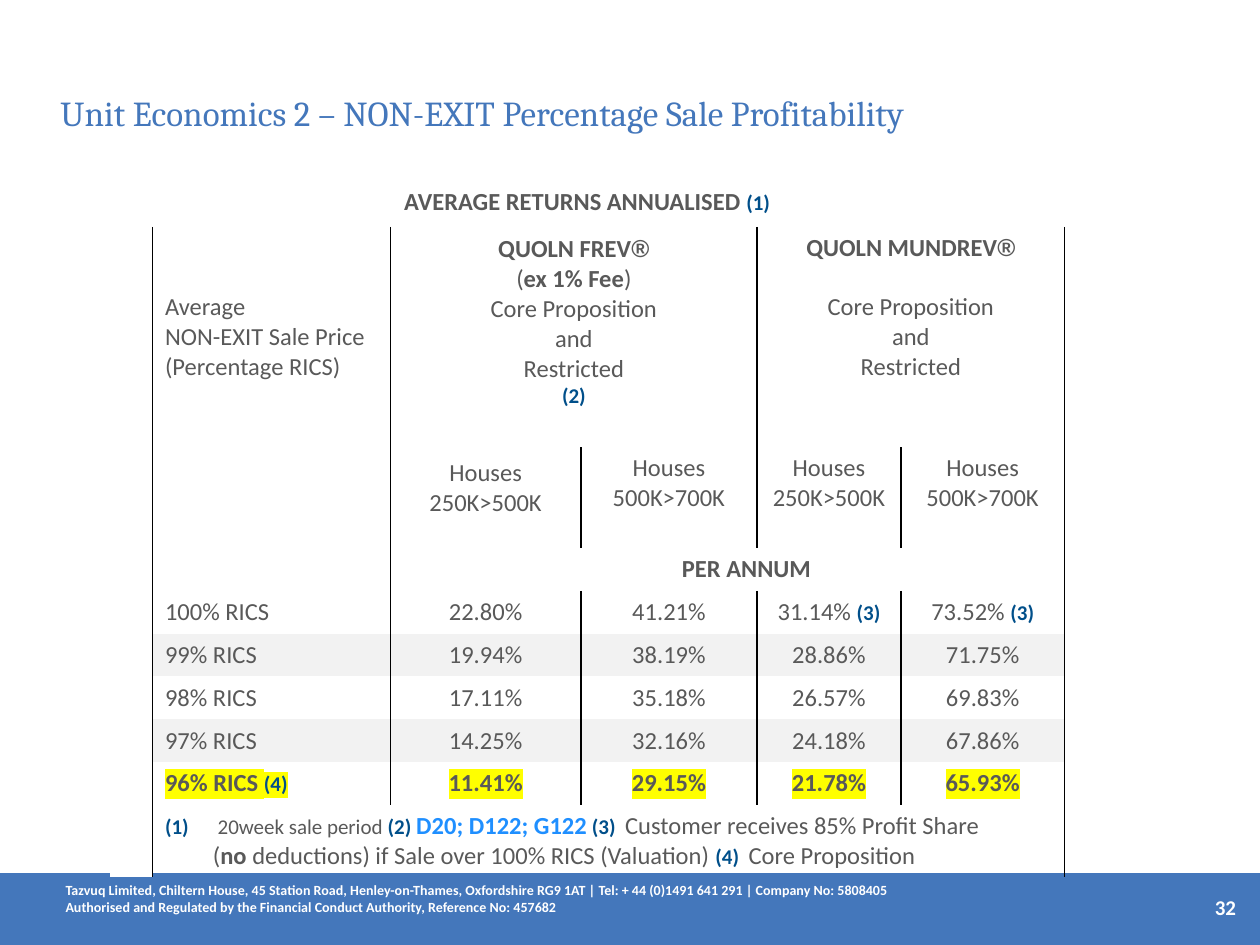
from dataclasses import dataclass
from lxml.etree import SubElement, Element
from pptx import Presentation
from pptx.dml.color import RGBColor
from pptx.enum.shapes import MSO_SHAPE
from pptx.enum.text import MSO_ANCHOR, PP_ALIGN
from pptx.oxml.ns import qn
from pptx.util import Inches, Pt


@dataclass(frozen=True)
class Theme:
    blue: str = "4477BB"
    white: str = "FFFFFF"
    grey: str = "595959"
    navy: str = "004F8A"
    sky: str = "1F8FFF"
    band: str = "F2F2F2"
    glow: str = "FFFF00"
    line: str = "000000"
    body: str = "Calibri"
    head: str = "Cambria"
    sign: str = "Arial"
    title: int = 20
    text: int = 14
    note: int = 12
    foot: int = 8


T = Theme()

# style: size, colour, bold, font
STYLES = {
    "text": (T.text, T.grey, False, T.body),
    "bold": (T.text, T.grey, True, T.body),
    "small": (T.note, T.grey, False, T.body),
    "note": (T.note, T.navy, True, T.body),
    "sky": (T.text, T.sky, True, T.body),
    "sign": (T.text, T.grey, True, T.sign),
    "title": (T.title, T.blue, False, T.head),
    "foot": (T.foot, T.white, True, T.body),
    "page": (T.note, T.white, True, T.body),
}

COLS = [0.34, 1.89, 1.51, 1.4, 1.14, 1.3]
ROWS = [0.39, 1.75, 0.8] + [0.34] * 6 + [0.57]
LAST = len(ROWS) - 1

PRICES = [
    ("100% RICS", "22.80%", "41.21%", "31.14% ", "73.52% "),
    ("99% RICS", "19.94%", "38.19%", "28.86%", "71.75%"),
    ("98% RICS", "17.11%", "35.18%", "26.57%", "69.83%"),
    ("97% RICS", "14.25%", "32.16%", "24.18%", "67.86%"),
    ("96% RICS ", "11.41%", "29.15%", "21.78%", "65.93%"),
]
MARKS = {(0, 3): "(3)", (0, 4): "(3)", (4, 0): "(4)"}


def style(font, name):
    size, color, bold, face = STYLES[name]
    font.size, font.bold, font.name = Pt(size), bold, face
    font.color.rgb = RGBColor.from_string(color)


def glow(run):
    """Highlight a run that already has its colour."""
    mark = Element(qn("a:highlight"))
    SubElement(mark, qn("a:srgbClr"), val=T.glow)
    run._r.rPr.find(qn("a:solidFill")).addnext(mark)


def write(frame, lines, align=PP_ALIGN.LEFT, lit=False):
    """Each line is a list of (text, style) runs."""
    for i, line in enumerate(lines):
        para = frame.paragraphs[0] if i == 0 else frame.add_paragraph()
        para.alignment = align
        names = {name for _, name in line}
        same = len(names) == 1 and not lit
        if same:
            style(para.font, line[0][1])
        for text, name in line:
            run = para.add_run()
            run.text = text
            if not same:
                style(run.font, name)
            if lit:
                glow(run)


def plain(*texts, name="text"):
    return [[(text, name)] for text in texts]


def label(slide, box, lines, align=PP_ALIGN.LEFT, anchor=MSO_ANCHOR.TOP):
    frame = slide.shapes.add_textbox(*map(Inches, box)).text_frame
    frame.word_wrap = True
    frame.vertical_anchor = anchor
    frame.margin_left = frame.margin_right = 0
    frame.margin_top = frame.margin_bottom = 0
    write(frame, lines, align)


def ruled(row, edge):
    """Tell whether a row has a line at the given column edge."""
    if row == 0 or edge == 0:
        return False
    if edge in (1, len(COLS)):
        return True
    if edge == 2:
        return row < LAST
    if edge == 4:
        return row not in (3, LAST)
    return row == 2 or 3 < row < LAST


def border(cell, left, right):
    props = cell._tc.get_or_add_tcPr()
    for side, shown in (("L", left), ("R", right), ("T", False), ("B", False)):
        line = SubElement(props, qn("a:ln" + side), w=str(Pt(1)))
        if shown:
            fill = SubElement(line, qn("a:solidFill"))
            SubElement(fill, qn("a:srgbClr"), val=T.line)
        else:
            SubElement(line, qn("a:noFill"))


def paint(cell, color):
    if color:
        cell.fill.solid()
        cell.fill.fore_color.rgb = RGBColor.from_string(color)
    else:
        cell.fill.background()


def put(cell, lines, align=PP_ALIGN.CENTER, low=0.05, lit=False):
    cell.margin_top, cell.margin_bottom = Inches(0.05), Inches(low)
    write(cell.text_frame, lines, align, lit)


def grid(slide):
    frame = slide.shapes.add_table(len(ROWS), len(COLS), Inches(0.87), Inches(1.41),
                                   Inches(sum(COLS)), Inches(sum(ROWS)))
    table = frame.table
    table.first_row = table.horz_banding = False
    for col, width in zip(table.columns, COLS):
        col.width = Inches(width)
    for row, height in zip(table.rows, ROWS):
        row.height = Inches(height)
    for row, first, last in ((0, 0, 5), (1, 2, 3), (1, 4, 5), (3, 2, 5), (LAST, 1, 5)):
        table.cell(row, first).merge(table.cell(row, last))
    for r in range(len(ROWS)):
        for c in range(len(COLS)):
            cell = table.cell(r, c)
            cell.vertical_anchor = MSO_ANCHOR.MIDDLE
            cell.margin_top = cell.margin_bottom = 0
            if cell.is_spanned:
                continue
            wide = cell.span_width if cell.is_merge_origin else 1
            border(cell, ruled(r, c), ruled(r, c + wide))
            band = T.band if r in (5, 7) else None
            paint(cell, T.white if c == 0 else band)
    return table


def heads(table):
    put(table.cell(0, 0), [[("AVERAGE RETURNS ANNUALISED ", "bold"), ("(1)", "note")]])
    put(table.cell(1, 1), plain("Average", "NON-EXIT Sale Price", "(Percentage RICS)"),
        PP_ALIGN.LEFT)
    core = plain("Core Proposition", "and", "Restricted")
    put(table.cell(1, 2), [
        [("QUOLN FREV", "bold"), ("®", "sign")],
        [("(", "text"), ("ex 1% Fee", "bold"), (")", "text")],
        *core, [("(2)", "note")]], low=0.29)
    mender = table.cell(1, 4)
    put(mender, [[("QUOLN MUNDREV", "bold"), ("®", "sign")], *core], low=0.52)
    mender.text_frame.paragraphs[1].space_before = Pt(17)
    for c in range(2, 6):
        span = "500K>700K" if c % 2 else "250K>500K"
        put(table.cell(2, c), plain("Houses", span), low=0.2 if c == 2 else 0.28)
    annum = table.cell(3, 2)
    put(annum, plain("PER ANNUM", name="bold"))
    annum.margin_left = Inches(0.4)


def prices(table):
    for r, row in enumerate(PRICES):
        lit = r == len(PRICES) - 1
        for c, text in enumerate(row):
            line = [(text, "bold" if lit else "text")]
            if (r, c) in MARKS:
                line.append((MARKS[r, c], "note"))
            put(table.cell(r + 4, c + 1), [line],
                PP_ALIGN.CENTER if c else PP_ALIGN.LEFT, lit=lit)


def notes(table):
    frame = table.cell(LAST, 1).text_frame
    lines = [
        [(" ", "note"), ("20week sale period", "small"), (" (2) ", "note"),
         ("D20; D122; G122", "sky"), (" (3)  ", "note"),
         ("Customer receives 85% Profit Share", "text")],
        [("(", "text"), ("no ", "bold"),
         ("deductions) if Sale over 100% RICS (Valuation) ", "text"),
         ("(4)  ", "note"), ("Core Proposition", "text")]]
    write(frame, lines)
    for para, shift in zip(frame.paragraphs, (-0.38, 0)):
        props = para._p.get_or_add_pPr()
        props.set("marL", str(Inches(0.38)))
        props.set("indent", str(Inches(shift)))
        if shift:
            SubElement(props, qn("a:buFont"), typeface=T.body)
            SubElement(props, qn("a:buAutoNum"), type="arabicParenBoth")


def footer(slide):
    bar = slide.shapes.add_shape(MSO_SHAPE.RECTANGLE, 0, Inches(6.93), Inches(10), Inches(0.57))
    bar.shadow.inherit = False
    bar.fill.solid()
    bar.fill.fore_color.rgb = RGBColor.from_string(T.blue)
    bar.line.fill.background()
    label(slide, (9.34, 7.1, 0.47, 0.2), plain("32", name="page"),
          PP_ALIGN.RIGHT, MSO_ANCHOR.MIDDLE)
    label(slide, (0.52, 7, 8.95, 0.27), plain(
        "Tazvuq Limited, Chiltern House, 45 Station Road, Henley-on-Thames, Oxfordshire RG9 1AT"
        " | Tel: + 44 (0)1491 641 291 | Company No: 5808405",
        "Authorised and Regulated by the Financial Conduct Authority, Reference No: 457682",
        name="foot"))


def main():
    deck = Presentation()
    deck.slide_width, deck.slide_height = Inches(10), Inches(7.5)
    slide = deck.slides.add_slide(deck.slide_layouts[6])
    footer(slide)
    label(slide, (0.48, 0.73, 8.98, 0.34), plain(
        "Unit Economics 2 – NON-EXIT Percentage Sale Profitability", name="title"))
    table = grid(slide)
    heads(table)
    prices(table)
    notes(table)
    deck.save("out.pptx")


if __name__ == "__main__":
    main()
